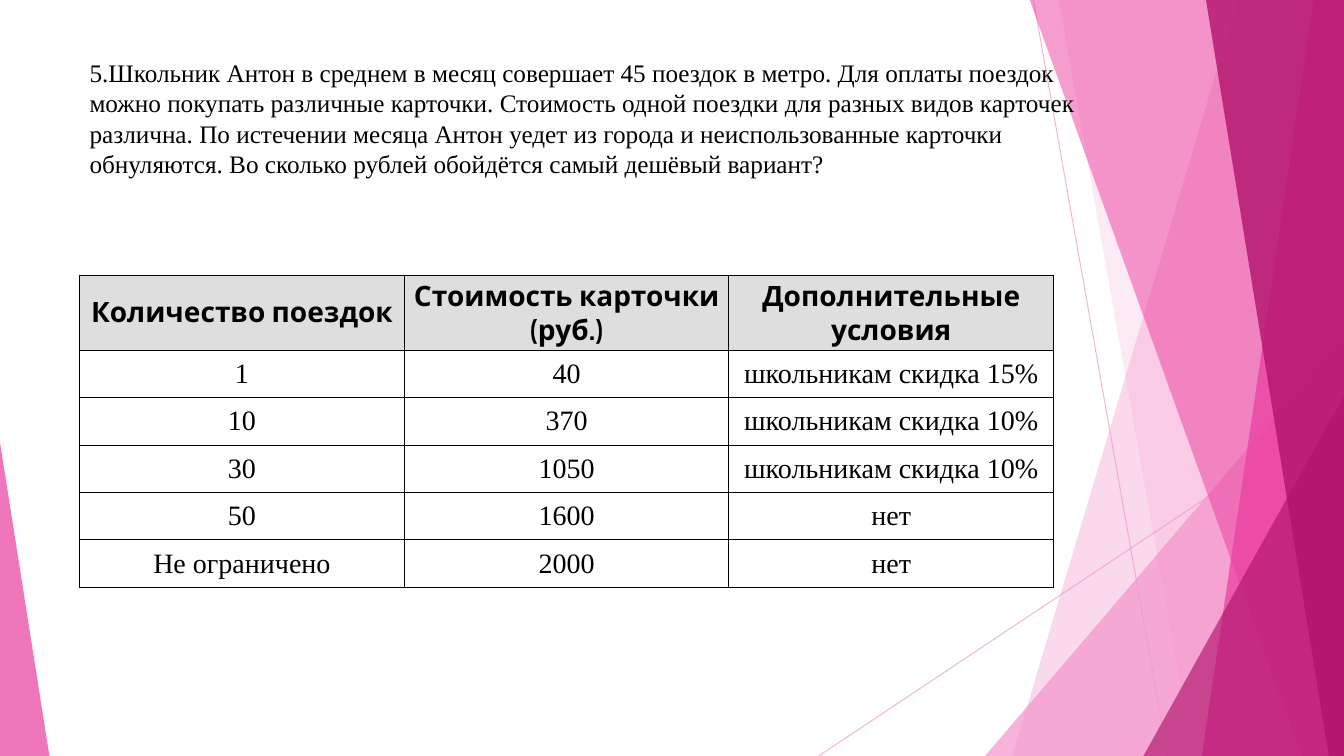
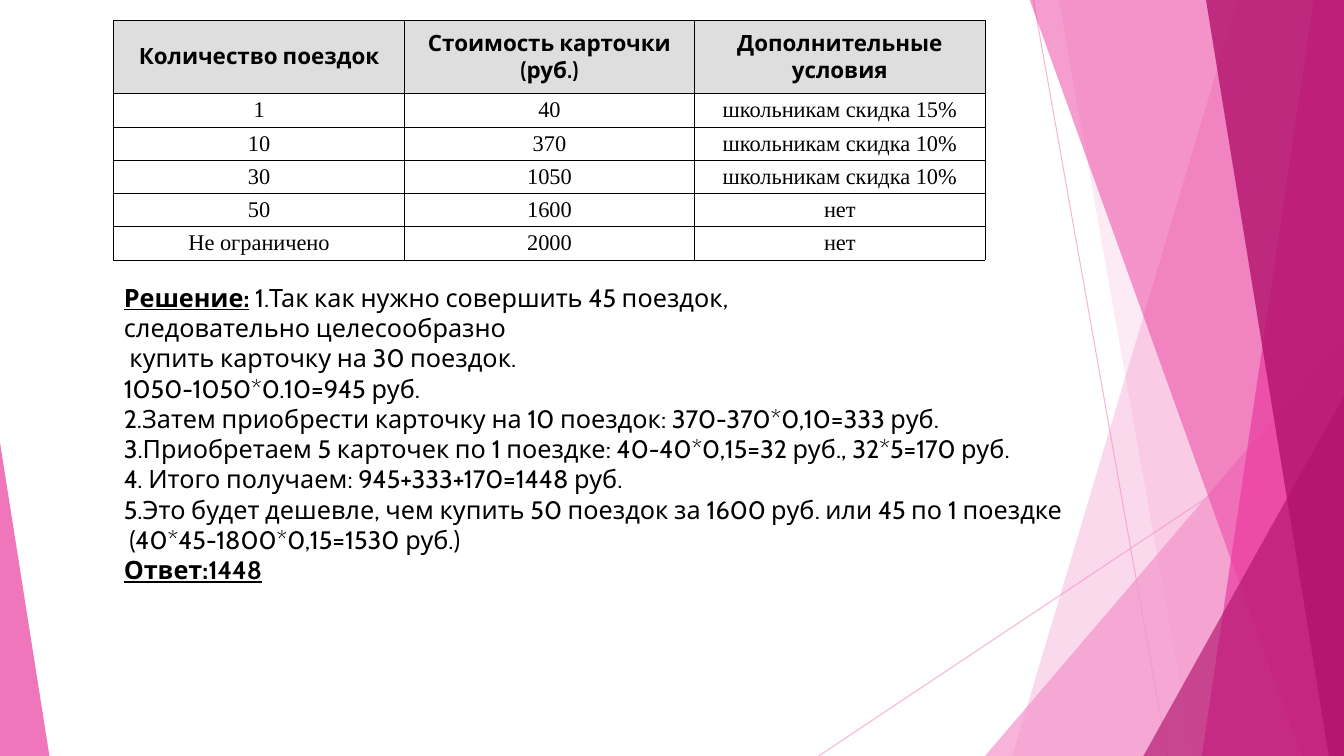
from lxml.etree import SubElement
from pptx import Presentation
from pptx.dml.color import RGBColor
from pptx.enum.shapes import MSO_CONNECTOR, MSO_SHAPE
from pptx.enum.text import MSO_ANCHOR, MSO_AUTO_SIZE, PP_ALIGN
from pptx.oxml import parse_xml
from pptx.oxml.ns import nsdecls, qn
from pptx.util import Inches, Pt

BLACK = RGBColor(0x00, 0x00, 0x00)
WHITE = RGBColor(0xFF, 0xFF, 0xFF)
HEADER_GRAY = RGBColor(0xDE, 0xDE, 0xDE)
LIGHT_PINK = RGBColor(0xF4, 0x96, 0xCB)
PINK = RGBColor(0xEB, 0x3D, 0x9F)
DARK_PINK = RGBColor(0xB2, 0x13, 0x6D)
HEADING_FONT = "Cabin"
BODY_FONT = "Times New Roman"
WIDTH, HEIGHT = 13.33, 7.5
BAND_TOP = -0.01

PROBLEM = (
    "5.Школьник Антон в среднем в месяц совершает 45 поездок в метро. "
    "Для оплаты поездок можно покупать различные карточки. "
    "Стоимость одной поездки для разных видов карточек различна. "
    "По истечении месяца Антон уедет из города и неиспользованные карточки "
    "обнуляются. Во сколько рублей обойдётся самый дешёвый вариант?"
)
FARES = [
    ("Количество поездок", "Стоимость карточки\n(руб.)", "Дополнительные условия"),
    ("1", "40", "школьникам скидка 15%"),
    ("10", "370", "школьникам скидка 10%"),
    ("30", "1050", "школьникам скидка 10%"),
    ("50", "1600", "нет"),
    ("Не ограничено", "2000", "нет"),
]
# Each paragraph is an emphasized lead followed by plain text.
SOLUTION = [
    ("Решение:", " 1.Так как нужно совершить 45 поездок,"),
    ("", "следовательно целесообразно"),
    ("", " купить карточку на 30 поездок."),
    ("", "1050-1050*0.10=945 руб."),
    ("", "2.Затем приобрести карточку на 10 поездок: 370-370*0,10=333 руб."),
    ("", "3.Приобретаем 5 карточек по 1 поездке: 40-40*0,15=32 руб., 32*5=170 руб."),
    ("", "4. Итого получаем: 945+333+170=1448 руб."),
    ("", "5.Это будет дешевле, чем купить 50 поездок за 1600 руб. или 45 по 1 поездке"),
    ("", " (40*45-1800*0,15=1530 руб.)"),
    ("Ответ:1448", ""),
]


def set_opacity(shape, percent):
    color = next(shape.element.iter(qn("a:srgbClr")))
    SubElement(color, qn("a:alpha"), val=str(percent * 1000))


def set_font(paragraph, name, size, bold=False):
    font = paragraph.font
    font.name, font.size, font.bold = name, Pt(size), bold
    font.color.rgb = BLACK


def add_borders(cell):
    properties = cell._tc.get_or_add_tcPr()
    for position, side in enumerate(("lnL", "lnR", "lnT", "lnB")):
        properties.insert(position, parse_xml(
            f'<a:{side} {nsdecls("a")} w="{Pt(0.75)}"><a:solidFill>'
            f'<a:srgbClr val="{BLACK}"/></a:solidFill></a:{side}>'))


class Deck:
    """Holds the presentation, its shared style and the current slide."""

    def __init__(self):
        self.presentation = Presentation()
        self.presentation.slide_width = Inches(WIDTH)
        self.presentation.slide_height = Inches(HEIGHT)
        self.slide = None

    def add_slide(self):
        self.slide = self.presentation.slides.add_slide(
            self.presentation.slide_layouts[6])
        self.add_decoration()

    def add_decoration(self):
        self.add_line(10.25, 0, 11.58, HEIGHT)
        self.add_line(WIDTH, 4.03, 8.12, HEIGHT)
        self.add_band(12.28, 10.04, LIGHT_PINK, 36)
        self.add_band(10.5, 11.83, LIGHT_PINK, 20)
        self.add_triangle(9.77, 3.33, 3.56, 1, LIGHT_PINK, 72)
        self.add_band(10.21, 12.91, PINK, 50)
        self.add_band(13.03, 11.92, PINK, 70)
        self.add_band(11.96, 13.18, DARK_PINK, 80)
        self.add_triangle(11.34, 3.93, 1.99, 1, DARK_PINK, 66)
        self.add_triangle(0, 4.39, 0.49, 0, PINK, 70)

    def add_line(self, x1, y1, x2, y2):
        line = self.slide.shapes.add_connector(
            MSO_CONNECTOR.STRAIGHT, Inches(x1), Inches(y1), Inches(x2), Inches(y2))
        line.line.color.rgb = LIGHT_PINK
        line.line.width = Pt(0.75)
        set_opacity(line, 70)
        SubElement(line.element.spPr, qn("a:effectLst"))

    def fill_shape(self, shape, color, opacity):
        shape.shadow.inherit = False
        shape.fill.solid()
        shape.fill.fore_color.rgb = color
        shape.line.fill.background()
        set_opacity(shape, opacity)

    def add_band(self, top_x, bottom_x, color, opacity):
        """Fill from a slanted left edge to the right edge of the slide."""
        builder = self.slide.shapes.build_freeform(Inches(top_x), Inches(BAND_TOP))
        corners = [(WIDTH, BAND_TOP), (WIDTH, HEIGHT), (bottom_x, HEIGHT)]
        builder.add_line_segments([(Inches(x), Inches(y)) for x, y in corners])
        self.fill_shape(builder.convert_to_shape(), color, opacity)

    def add_triangle(self, left, top, width, apex, color, opacity):
        """Stand a triangle on the bottom edge of the slide."""
        triangle = self.slide.shapes.add_shape(
            MSO_SHAPE.ISOSCELES_TRIANGLE, Inches(left), Inches(top),
            Inches(width), Inches(HEIGHT - top))
        triangle.adjustments[0] = apex
        self.fill_shape(triangle, color, opacity)

    def add_text(self, left, top, width, height, paragraphs, font):
        box = self.slide.shapes.add_textbox(
            Inches(left), Inches(top), Inches(width), Inches(height))
        frame = box.text_frame
        frame.word_wrap = True
        frame.auto_size = MSO_AUTO_SIZE.SHAPE_TO_FIT_TEXT
        for index, (lead, text) in enumerate(paragraphs):
            paragraph = frame.add_paragraph() if index else frame.paragraphs[0]
            set_font(paragraph, font, 18)
            if lead:
                run = paragraph.add_run()
                run.text = lead
                run.font.bold = run.font.underline = True
            if text:
                paragraph.add_run().text = text

    def add_table(self, left, top, column_width, header_height, row_height, size):
        rows, columns = len(FARES), len(FARES[0])
        table = self.slide.shapes.add_table(
            rows, columns, Inches(left), Inches(top), Inches(column_width * columns),
            Inches(header_height + row_height * (rows - 1))).table
        table.first_row = table.horz_banding = False
        for column in table.columns:
            column.width = Inches(column_width)
        for index, values in enumerate(FARES):
            header = index == 0
            table.rows[index].height = Inches(header_height if header else row_height)
            for cell, value in zip(table.rows[index].cells, values):
                cell.margin_left = cell.margin_right = Inches(0.04)
                cell.margin_top = cell.margin_bottom = Inches(0.04)
                cell.vertical_anchor = MSO_ANCHOR.MIDDLE
                cell.fill.solid()
                cell.fill.fore_color.rgb = HEADER_GRAY if header else WHITE
                add_borders(cell)
                paragraph = cell.text_frame.paragraphs[0]
                paragraph.text = value
                paragraph.alignment = PP_ALIGN.CENTER
                set_font(paragraph, HEADING_FONT if header else BODY_FONT, size, header)


def main():
    deck = Deck()

    deck.add_slide()
    deck.add_text(0.79, 0.52, 10.28, 1.31, [("", PROBLEM)], BODY_FONT)
    deck.add_table(0.79, 2.73, 3.22, 0.74, 0.47, 20)

    deck.add_slide()
    deck.add_table(1.13, 0.2, 2.88, 0.73, 0.33, 16)
    deck.add_text(1.13, 2.75, 11, 3.43, SOLUTION, HEADING_FONT)

    deck.presentation.save("out.pptx")


if __name__ == "__main__":
    main()
